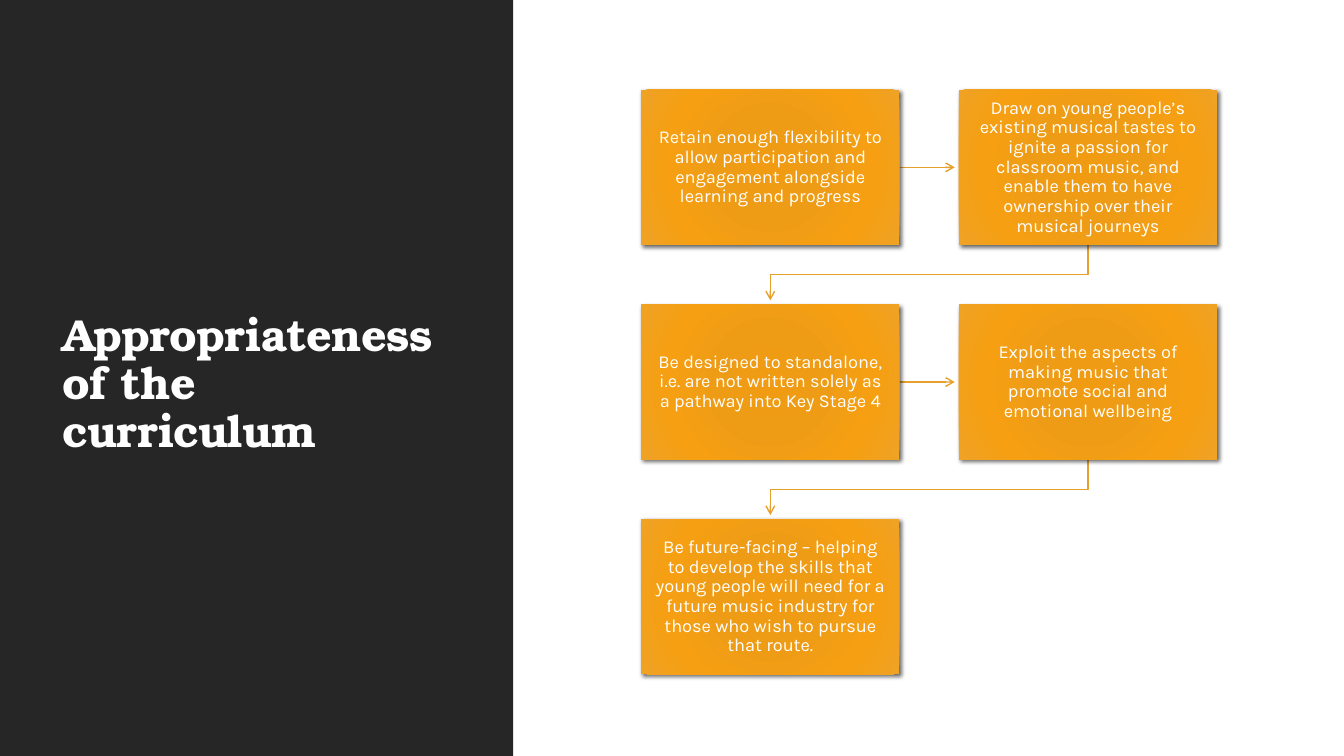
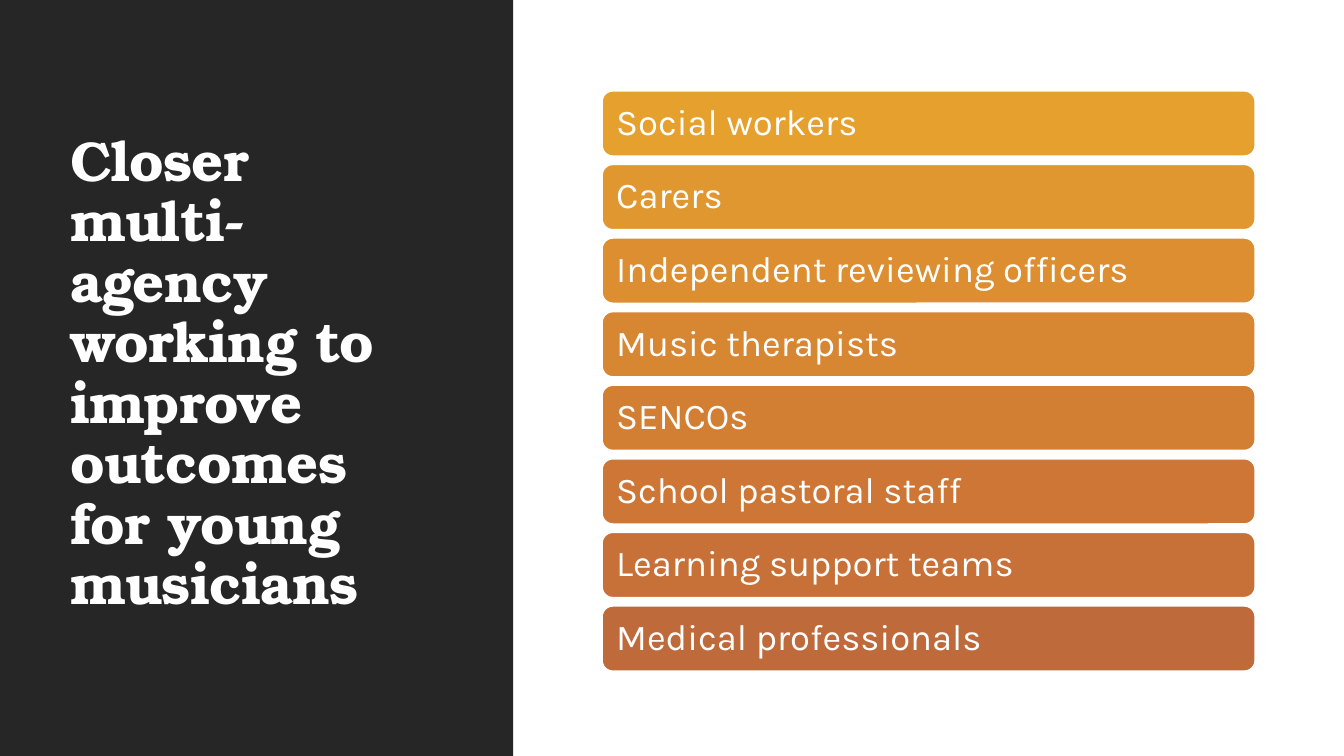
from lxml.etree import SubElement
from pptx import Presentation
from pptx.dml.color import RGBColor
from pptx.enum.shapes import MSO_CONNECTOR as Connector, MSO_SHAPE as Shape
from pptx.enum.text import MSO_ANCHOR as Anchor, PP_ALIGN as Align
from pptx.oxml.ns import qn
from pptx.util import Inches, Pt

# Content
CURRICULUM_TITLE = "Appropriateness of the curriculum"
PRINCIPLES = [
    "Retain enough flexibility to allow participation and engagement "
    "alongside learning and progress",
    "Draw on young people’s existing musical tastes to ignite a passion for "
    "classroom music, and enable them to have ownership over their musical journeys",
    "Be designed to standalone, i.e. are not written solely as a pathway "
    "into Key Stage 4",
    "Exploit the aspects of making music that promote social and emotional wellbeing",
    "Be future-facing – helping to develop the skills that young people will need "
    "for a future music industry for those who wish to pursue that route.",
]
AGENCY_TITLE = "Closer multi-agency working to improve outcomes for young musicians"
AGENCIES = [
    ("Social workers", "E6A02E"),
    ("Carers", "E1972F"),
    ("Independent reviewing officers", "DC8E30"),
    ("Music therapists", "D78632"),
    ("SENCOs", "D27E33"),
    ("School pastoral staff", "CD7635"),
    ("Learning support teams", "C77037"),
    ("Medical professionals", "BF6A3B"),
]

# Shared style
PANEL, WHITE, AMBER = "262626", "FFFFFF", "E6A02E"
BOX_STOPS = [(0, "F09B11"), (34, "EE9C16"), (70, "F69F12"), (100, "EFA225")]
TITLE_FONT, BODY_FONT = "TeX Gyre Bonum", "Karla"

# Flow grid and bar stack, in inches
COLUMNS = 2
BOX_LEFT, BOX_TOP, BOX_W, BOX_H = 6.36, 0.89, 2.56, 1.54
COLUMN_STEP, ROW_STEP = 3.15, 2.13
ARROW_GAP = 0.04
BAR_LEFT, BAR_TOP, BAR_W, BAR_H, BAR_STEP = 5.97, 0.9, 6.48, 0.65, 0.73


def rgb(value):
    return RGBColor.from_string(value)


def inches(*lengths):
    return [Inches(length) for length in lengths]


def write(shape, text, size, font=BODY_FONT, inset=0.13, align=Align.LEFT,
          anchor=Anchor.MIDDLE):
    frame = shape.text_frame
    frame.word_wrap = True
    frame.vertical_anchor = anchor
    frame.margin_left = frame.margin_right = Inches(inset)
    frame.margin_top = frame.margin_bottom = Inches(inset)
    paragraph = frame.paragraphs[0]
    paragraph.alignment = align
    paragraph.line_spacing = 0.9
    run = paragraph.add_run()
    run.text = text
    run.font.size, run.font.name = Pt(size), font
    run.font.color.rgb = rgb(WHITE)
    return run


def add_block(slide, kind, place, fill):
    block = slide.shapes.add_shape(kind, *inches(*place))
    block.shadow.inherit = False
    block.fill.solid()
    block.fill.fore_color.rgb = rgb(fill)
    block.line.fill.background()
    return block


def add_titled_slide(deck, title, place, size):
    slide = deck.slides.add_slide(deck.slide_layouts[6])
    add_block(slide, Shape.RECTANGLE, (0, 0, 5.09, 7.5), PANEL)
    box = slide.shapes.add_textbox(*inches(*place))
    run = write(box, title, size, TITLE_FONT, 0.1, anchor=Anchor.BOTTOM)
    run.font.bold = True
    run._r.get_or_add_rPr().set("spc", "-50")
    return slide


def add_glow(box):
    """Give a box its round gradient and soft drop shadow."""
    box.fill.gradient()
    gradient = box._element.spPr.find(qn("a:gradFill"))
    for child in list(gradient):
        gradient.remove(child)
    stops = SubElement(gradient, qn("a:gsLst"))
    for position, colour in BOX_STOPS:
        stop = SubElement(stops, qn("a:gs"), pos=str(position * 1000))
        SubElement(stop, qn("a:srgbClr"), val=colour)
    circle = SubElement(gradient, qn("a:path"), {"path": "circle"})
    SubElement(circle, qn("a:fillToRect"), {side: "100000" for side in "ltrb"})

    effects = box._element.spPr.find(qn("a:effectLst"))
    shadow = SubElement(effects, qn("a:outerShdw"), blurRad=str(Pt(3)),
                        dist=str(Pt(2)), dir=str(45 * 60000), rotWithShape="0")
    black = SubElement(shadow, qn("a:srgbClr"), val="000000")
    SubElement(black, qn("a:alpha"), val="60000")


def style_arrow(arrow):
    arrow.line.color.rgb = rgb(AMBER)
    arrow.line.width = Pt(1)
    SubElement(arrow.line._get_or_add_ln(), qn("a:tailEnd"), type="arrow")


def add_arrow(slide, start, end):
    """Straight arrow along a row, stepped arrow down to the next row."""
    (x1, y1), (x2, y2) = start, end
    if y1 == y2:
        arrow = slide.shapes.add_connector(Connector.STRAIGHT, *inches(x1, y1, x2, y2))
        style_arrow(arrow)
        SubElement(arrow._element.spPr, qn("a:effectLst"))
        return
    bend = (y1 + y2 + ARROW_GAP) / 2
    outline = slide.shapes.build_freeform(*inches(x1, y1))
    corners = [(x1, bend), (x2, bend), (x2, y2)]
    outline.add_line_segments([inches(*corner) for corner in corners], close=False)
    arrow = outline.convert_to_shape()
    arrow.fill.background()
    style_arrow(arrow)
    arrow.shadow.inherit = False


def build_curriculum(deck):
    slide = add_titled_slide(deck, CURRICULUM_TITLE, (0.52, 2.87, 4.12, 1.77), 32)
    corners = [(BOX_LEFT + i % COLUMNS * COLUMN_STEP, BOX_TOP + i // COLUMNS * ROW_STEP)
               for i in range(len(PRINCIPLES))]
    # Arrows from each box to the next
    for (x, y), (next_x, next_y) in zip(corners, corners[1:]):
        if y == next_y:
            middle = y + BOX_H / 2
            add_arrow(slide, (x + BOX_W, middle), (next_x - ARROW_GAP, middle))
        else:
            add_arrow(slide, (x + BOX_W / 2, y + BOX_H),
                      (next_x + BOX_W / 2, next_y - ARROW_GAP))
    # Boxes
    for principle, (x, y) in zip(PRINCIPLES, corners):
        box = add_block(slide, Shape.RECTANGLE, (x, y, BOX_W, BOX_H), AMBER)
        add_glow(box)
        write(box, principle, 13, align=Align.CENTER)


def build_agencies(deck):
    slide = add_titled_slide(deck, AGENCY_TITLE, (0.6, 1.29, 3.85, 4.93), 40)
    for i, (agency, colour) in enumerate(AGENCIES):
        place = (BAR_LEFT, BAR_TOP + i * BAR_STEP, BAR_W, BAR_H)
        bar = add_block(slide, Shape.ROUNDED_RECTANGLE, place, colour)
        bar.line.color.rgb = rgb(WHITE)
        bar.line.width = Pt(1.25)
        # The rounded corners add 0.03 to the inset
        write(bar, agency, 26, inset=0.11)


def main():
    deck = Presentation()
    deck.slide_width, deck.slide_height = inches(13.33, 7.5)
    build_curriculum(deck)
    build_agencies(deck)
    deck.save("out.pptx")


if __name__ == "__main__":
    main()
